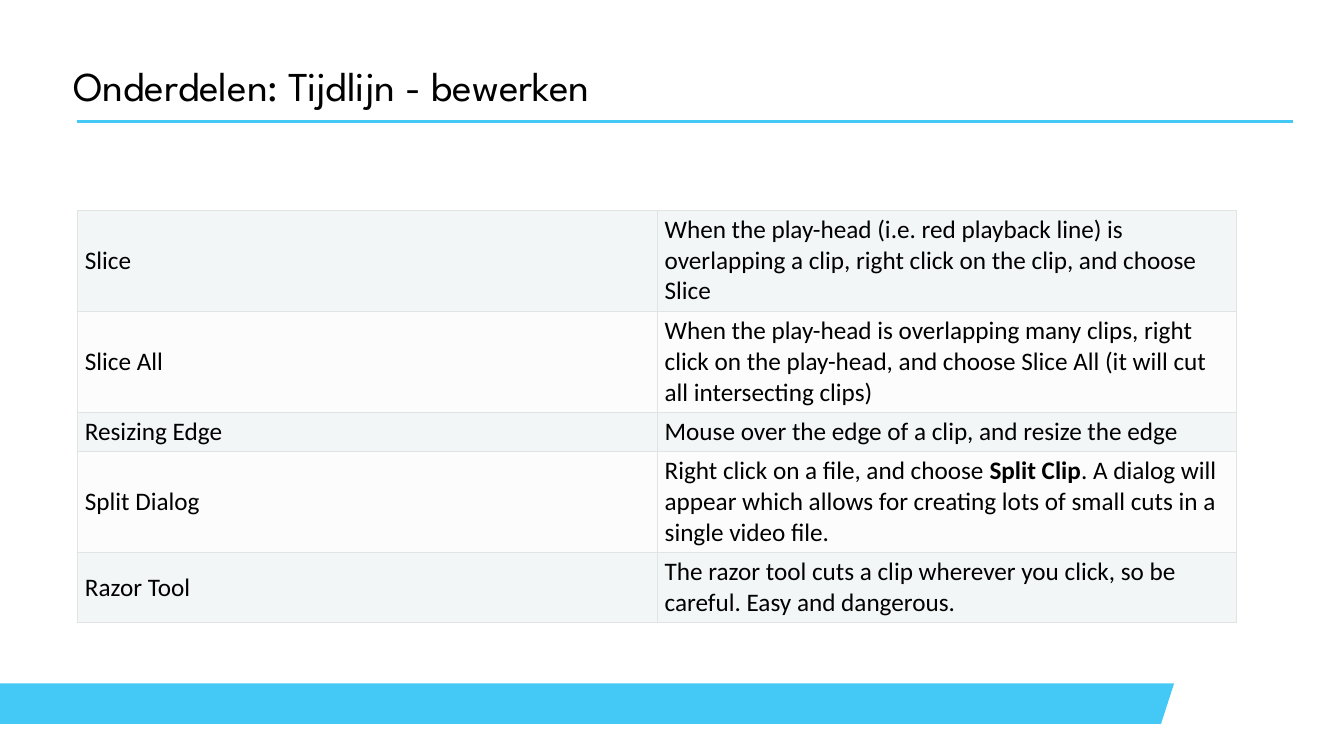
from lxml.etree import SubElement
from pptx import Presentation
from pptx.dml.color import RGBColor
from pptx.enum.shapes import MSO_CONNECTOR
from pptx.enum.text import MSO_ANCHOR, PP_ALIGN
from pptx.oxml.ns import qn
from pptx.util import Cm, Pt

COLORS = {"sky": "44C8F5", "text": "000000", "band": "F3F6F6",
          "plain": "FCFCFC", "border": "E1E4E5"}


def rgb(name):
    return RGBColor.from_string(COLORS[name])


def add_borders(cell):
    tc_pr = cell._tc.get_or_add_tcPr()
    for side in ("lnL", "lnR", "lnT", "lnB"):
        ln = SubElement(tc_pr, qn(f"a:{side}"), w=str(Pt(0.38)))
        fill = SubElement(ln, qn("a:solidFill"))
        SubElement(fill, qn("a:srgbClr"), val=COLORS["border"])


prs = Presentation()
prs.slide_width, prs.slide_height = Cm(33.87), Cm(19.05)
s = prs.slides.add_slide(prs.slide_layouts[5])

# Footer band with slanted end
builder = s.shapes.build_freeform(Cm(-0.03), Cm(18.24))
builder.add_line_segments([(Cm(x), Cm(y)) for x, y in
                           [(0, 17.22), (29.59, 17.22), (29.26, 18.24)]])
band = builder.convert_to_shape()
band.shadow.inherit = False
band.fill.solid()
band.fill.fore_color.rgb = rgb("sky")
band.line.fill.background()

# Rule under the title
rule = s.shapes.add_connector(MSO_CONNECTOR.STRAIGHT, Cm(1.93), Cm(3.06), Cm(32.59), Cm(3.06))
rule.line.color.rgb = rgb("sky")
rule.line.width = Pt(2.25)
SubElement(rule._element.spPr, qn("a:effectLst"))

# Title
title = s.shapes.title
title.left, title.top, title.width, title.height = Cm(1.85), Cm(1.65), Cm(30.68), Cm(1.17)
tf = title.text_frame
tf.margin_left = tf.margin_right = tf.margin_top = tf.margin_bottom = 0
tf.vertical_anchor = MSO_ANCHOR.MIDDLE
p = tf.paragraphs[0]
p.text = "Onderdelen: Tijdlijn - bewerken"
p.alignment = PP_ALIGN.LEFT
p.line_spacing = 0.9
p.font.name = "League Spartan"
p.font.size = Pt(29.3)
p.font.color.rgb = rgb("text")

# Table of editing tools: name, row height, description as (text, bold) runs
TOOLS = [
    ("Slice", 2.55, [("When the play-head (i.e. red playback line) is overlapping a clip, "
                      "right click on the clip, and choose Slice", False)]),
    ("Slice All", 2.55, [("When the play-head is overlapping many clips, right click on the "
                          "play-head, and choose Slice All (it will cut all intersecting clips)",
                          False)]),
    ("Resizing Edge", 0.98, [("Mouse over the edge of a clip, and resize the edge", False)]),
    ("Split Dialog", 2.55, [("Right click on a file, and choose ", False),
                            ("Split Clip", True),
                            (". A dialog will appear which allows for creating lots of small "
                             "cuts in a single video file.", False)]),
    ("Razor Tool", 1.77, [("The razor tool cuts a clip wherever you click, so be careful. "
                           "Easy and dangerous.", False)]),
]
table = s.shapes.add_table(len(TOOLS), 2, Cm(1.94), Cm(5.29), Cm(29.22), Cm(10.4)).table
table.first_row = table.horz_banding = False
for column in table.columns:
    column.width = Cm(14.61)

for i, (name, height, description) in enumerate(TOOLS):
    table.rows[i].height = Cm(height)
    for j, runs in enumerate([[(name, False)], description]):
        cell = table.cell(i, j)
        cell.margin_left = cell.margin_right = Cm(0.2)
        cell.margin_top = cell.margin_bottom = Cm(0.1)
        cell.vertical_anchor = MSO_ANCHOR.MIDDLE
        add_borders(cell)
        cell.fill.solid()
        cell.fill.fore_color.rgb = rgb("plain" if i % 2 else "band")
        p = cell.text_frame.paragraphs[0]
        p.font.name = "Calibri"
        p.font.size = Pt(18)
        p.font.color.rgb = rgb("text")
        for text, bold in runs:
            r = p.add_run()
            r.text = text
            if bold:
                r.font.bold = True

prs.save("out.pptx")
